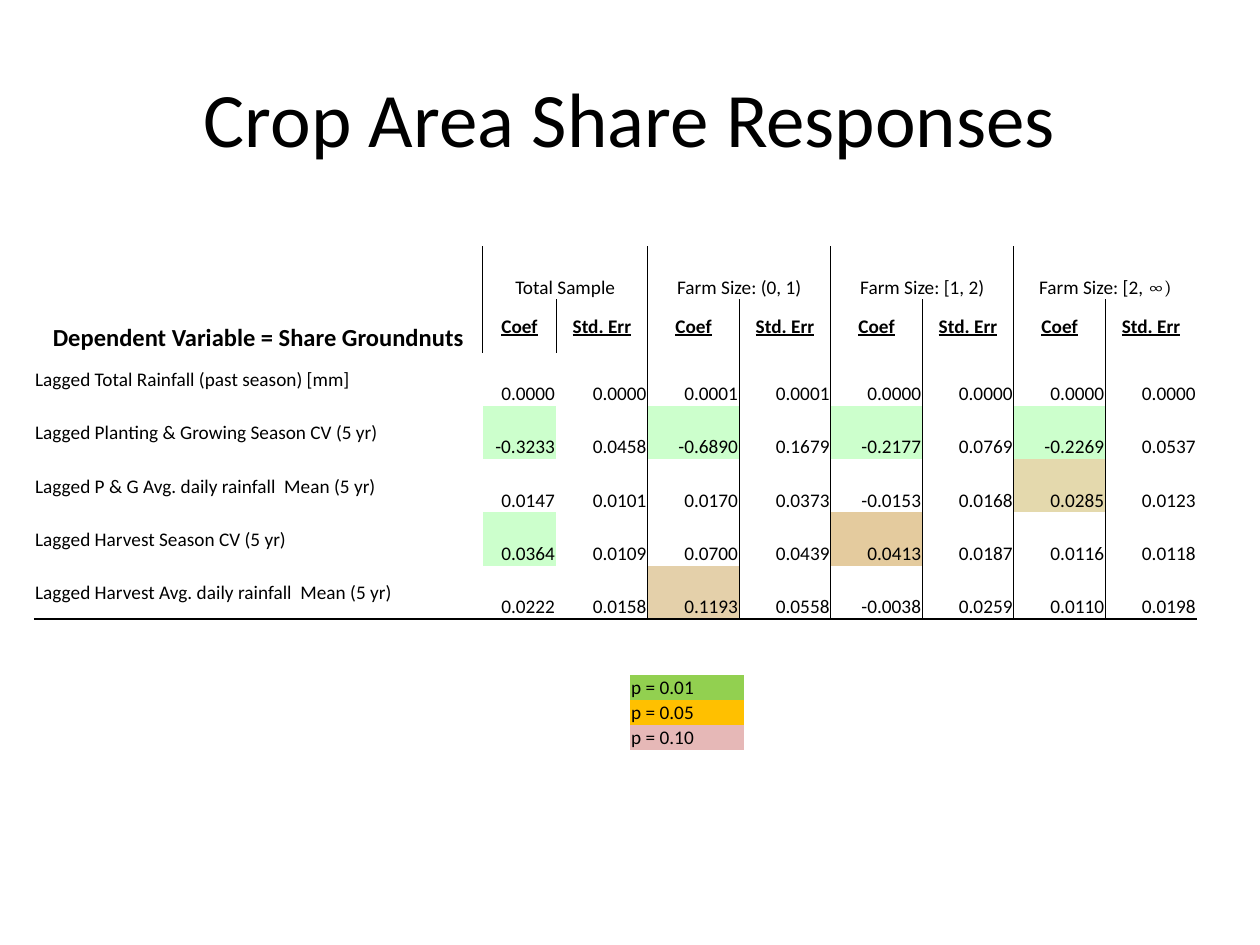
from lxml import etree
from pptx import Presentation
from pptx.dml.color import RGBColor
from pptx.enum.text import MSO_ANCHOR, PP_ALIGN
from pptx.oxml.ns import qn
from pptx.util import Pt

LEFT, CENTER, RIGHT = PP_ALIGN.LEFT, PP_ALIGN.CENTER, PP_ALIGN.RIGHT
MIDDLE, BOTTOM = MSO_ANCHOR.MIDDLE, MSO_ANCHOR.BOTTOM
BLACK = RGBColor(0x00, 0x00, 0x00)
MINT = RGBColor(0xCC, 0xFF, 0xCC)
SAND = RGBColor(0xE4, 0xD9, 0xAD)
TAN = RGBColor(0xE4, 0xCB, 0x9E)
BEIGE = RGBColor(0xE4, 0xD0, 0xAA)
GREEN = RGBColor(0x92, 0xD0, 0x50)
AMBER = RGBColor(0xFF, 0xC0, 0x00)
PINK = RGBColor(0xE6, 0xB8, 0xB7)
NO_STYLE = "{2D5ABB26-0587-4C30-8999-92F81FD0307C}"

TITLE = "Crop Area Share Responses"
CORNER = "Dependent Variable = Share Groundnuts"
GROUPS = [
    [("Total Sample", "Calibri")],
    [("Farm Size: (0, 1)", "Calibri")],
    [("Farm Size: [1, 2)", "Calibri")],
    [("Farm Size: [2, ", "Calibri"), ("∞)", "Cambria")],
]
MEASURES = ["Coef", "Std. Err"]
RESULTS = [
    ("Lagged Total Rainfall (past season) [mm]",
     [0.0000, 0.0000, 0.0001, 0.0001, 0.0000, 0.0000, 0.0000, 0.0000]),
    ("Lagged Planting & Growing Season CV (5 yr)",
     [-0.3233, 0.0458, -0.6890, 0.1679, -0.2177, 0.0769, -0.2269, 0.0537]),
    ("Lagged P & G Avg. daily rainfall  Mean (5 yr)",
     [0.0147, 0.0101, 0.0170, 0.0373, -0.0153, 0.0168, 0.0285, 0.0123]),
    ("Lagged Harvest Season CV (5 yr)",
     [0.0364, 0.0109, 0.0700, 0.0439, 0.0413, 0.0187, 0.0116, 0.0118]),
    ("Lagged Harvest Avg. daily rainfall  Mean (5 yr)",
     [0.0222, 0.0158, 0.1193, 0.0558, -0.0038, 0.0259, 0.0110, 0.0198]),
]
HIGHLIGHTS = {
    (3, 1): MINT, (3, 3): MINT, (3, 5): MINT, (3, 7): MINT,
    (4, 7): SAND, (5, 1): MINT, (5, 5): TAN, (6, 3): BEIGE,
}
LEGEND = [("p = 0.01", GREEN), ("p = 0.05", AMBER), ("p = 0.10", PINK)]

COL_WIDTHS = [256.5, 42] + [52.3] * 7
ROW_HEIGHT = 30.45
LEGEND_WIDTH, LEGEND_ROW = 65, 14.2


def add_plain_table(s, x, y, widths, heights):
    frame = s.shapes.add_table(len(heights), len(widths), Pt(x), Pt(y),
                               Pt(sum(widths)), Pt(sum(heights)))
    table = frame.table
    table.first_row = table.horz_banding = False
    table._tbl.tblPr.find(qn("a:tableStyleId")).text = NO_STYLE
    for col, width in zip(table.columns, widths):
        col.width = Pt(width)
    for row, height in zip(table.rows, heights):
        row.height = Pt(height)
    return table


def fill_cell(cell, runs, align=LEFT, anchor=BOTTOM, **font):
    cell.vertical_anchor = anchor
    cell.margin_left = cell.margin_right = cell.margin_top = Pt(0.7)
    cell.margin_bottom = 0
    p = cell.text_frame.paragraphs[0]
    p.alignment = align
    for text, name in runs:
        r = p.add_run()
        r.text = text
        r.font.color.rgb = BLACK
        for key, value in {"name": name, "size": Pt(11), **font}.items():
            setattr(r.font, key, value)


def set_fill(cell, color):
    if color is None:
        cell.fill.background()
    else:
        cell.fill.solid()
        cell.fill.fore_color.rgb = color


def add_border(cell, side, width):
    ln = etree.SubElement(cell._tc.get_or_add_tcPr(), qn("a:ln" + side), w=str(Pt(width)))
    fill = etree.SubElement(ln, qn("a:solidFill"))
    etree.SubElement(fill, qn("a:srgbClr"), val=str(BLACK))


def has_rule_after(row, col):
    return col in (2, 4, 6) or (col == 0 and row < 2)


def build_results(s):
    n_rows = len(RESULTS) + 2
    table = add_plain_table(s, 19.4, 140.6, COL_WIDTHS, [ROW_HEIGHT] * n_rows)
    table.cell(0, 0).merge(table.cell(1, 0))
    fill_cell(table.cell(0, 0), [(CORNER, "Calibri")], CENTER, size=Pt(14), bold=True)
    for g, runs in enumerate(GROUPS):
        first = 1 + 2 * g
        table.cell(0, first).merge(table.cell(0, first + 1))
        fill_cell(table.cell(0, first), runs, CENTER)
        for m, measure in enumerate(MEASURES):
            fill_cell(table.cell(1, first + m), [(measure, "Calibri")], CENTER, MIDDLE,
                      bold=True, underline=True)
    for r, (label, values) in enumerate(RESULTS, 2):
        fill_cell(table.cell(r, 0), [(label, "Calibri")], anchor=MIDDLE)
        for c, value in enumerate(values, 1):
            fill_cell(table.cell(r, c), [(f"{value:.4f}", "Calibri")], RIGHT)
    for r in range(n_rows):
        for c in range(len(COL_WIDTHS)):
            cell = table.cell(r, c)
            if has_rule_after(r, c - 1):
                add_border(cell, "L", 0.5)
            if has_rule_after(r, c + cell.span_width - 1 if cell.is_merge_origin else c):
                add_border(cell, "R", 0.5)
            if r == n_rows - 1:
                add_border(cell, "B", 1)
            set_fill(cell, HIGHLIGHTS.get((r, c)))


def build_legend(s):
    table = add_plain_table(s, 360, 385.5, [LEGEND_WIDTH], [LEGEND_ROW] * len(LEGEND))
    for r, (text, color) in enumerate(LEGEND):
        fill_cell(table.cell(r, 0), [(text, "Calibri")])
        set_fill(table.cell(r, 0), color)


def main():
    prs = Presentation()
    prs.slide_width, prs.slide_height = Pt(720), Pt(540)
    s = prs.slides.add_slide(prs.slide_layouts[5])
    title = s.shapes.title
    title.left, title.top, title.width, title.height = Pt(36), Pt(21.6), Pt(648), Pt(90)
    tf = title.text_frame
    tf.text = TITLE
    tf.vertical_anchor = MIDDLE
    p = tf.paragraphs[0]
    p.alignment = CENTER
    p.font.color.rgb = BLACK
    for key, value in {"name": "Calibri", "size": Pt(44)}.items():
        setattr(p.font, key, value)
    build_results(s)
    build_legend(s)
    prs.save("out.pptx")


if __name__ == "__main__":
    main()
